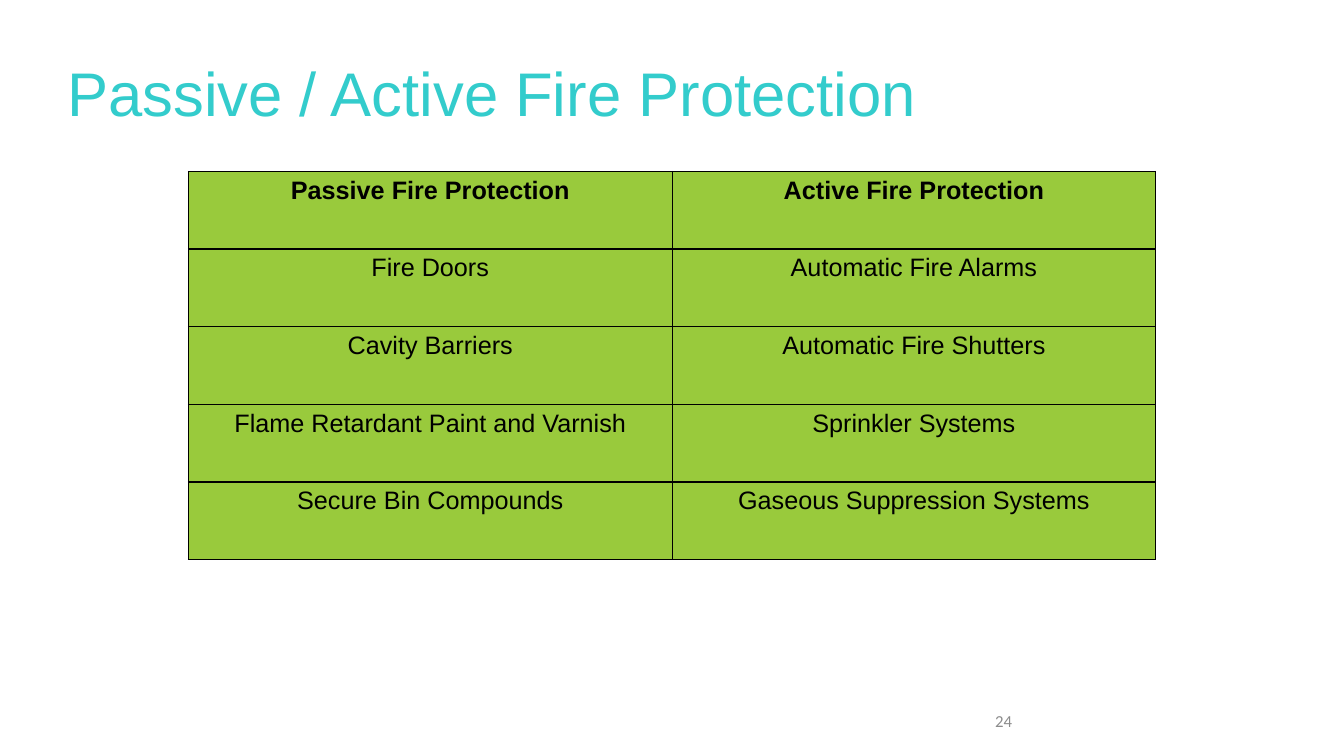
from lxml.etree import SubElement
from pptx import Presentation
from pptx.dml.color import RGBColor
from pptx.enum.text import MSO_ANCHOR as Anchor, PP_ALIGN as Align
from pptx.oxml.ns import qn
from pptx.util import Pt

TEAL = RGBColor(0x33, 0xCC, 0xCC)
GREEN = RGBColor(0x99, 0xCA, 0x3C)
BLACK = RGBColor(0, 0, 0)
GRAY = RGBColor(0x8C, 0x8C, 0x8C)

ROWS = [
    ("Passive Fire Protection", "Active Fire Protection"),
    ("Fire Doors", "Automatic Fire Alarms"),
    ("Cavity Barriers", "Automatic Fire Shutters"),
    ("Flame Retardant Paint and Varnish", "Sprinkler Systems"),
    ("Secure Bin Compounds", "Gaseous Suppression Systems"),
]


def add_run(para, text, size, color, face="Arial", bold=False):
    run = para.add_run()
    run.text = text
    font = run.font
    font.name, font.size, font.bold = face, Pt(size), bold
    font.color.rgb = color


def add_label(slide, box, text, size, color, face="Arial",
              align=Align.LEFT, anchor=Anchor.TOP):
    frame = slide.shapes.add_textbox(*map(Pt, box)).text_frame
    frame.word_wrap = True
    frame.vertical_anchor = anchor
    para = frame.paragraphs[0]
    para.alignment = align
    add_run(para, text, size, color, face)


def add_edges(cell):
    props = cell._tc.get_or_add_tcPr()
    for index, side in enumerate(("lnL", "lnR", "lnT", "lnB")):
        line = SubElement(props, qn(f"a:{side}"), w=str(Pt(1)))
        fill = SubElement(line, qn("a:solidFill"))
        SubElement(fill, qn("a:srgbClr"), val=str(BLACK))
        # Borders come before the fill in the cell properties
        props.insert(index, line)


def add_grid(slide, box, rows):
    frame = slide.shapes.add_table(len(rows), len(rows[0]), *map(Pt, box))
    table = frame.table
    for r, texts in enumerate(rows):
        for c, text in enumerate(texts):
            cell = table.cell(r, c)
            cell.fill.solid()
            cell.fill.fore_color.rgb = GREEN
            add_edges(cell)
            para = cell.text_frame.paragraphs[0]
            para.alignment = Align.CENTER
            add_run(para, text, 18, BLACK, bold=r == 0)


def main():
    deck = Presentation()
    deck.slide_width, deck.slide_height = Pt(960), Pt(540)
    slide = deck.slides.add_slide(deck.slide_layouts[6])

    # Page number
    add_label(slide, (642, 500.4, 88, 28.8), "24", 12, GRAY, "Calibri",
              Align.RIGHT, Anchor.MIDDLE)
    # Title
    add_label(slide, (41, 36, 960, 114), "Passive / Active Fire Protection",
              44, TEAL)
    # Comparison table
    add_grid(slide, (134.6, 122.4, 691, 277.5), ROWS)

    deck.save("out.pptx")


if __name__ == "__main__":
    main()
